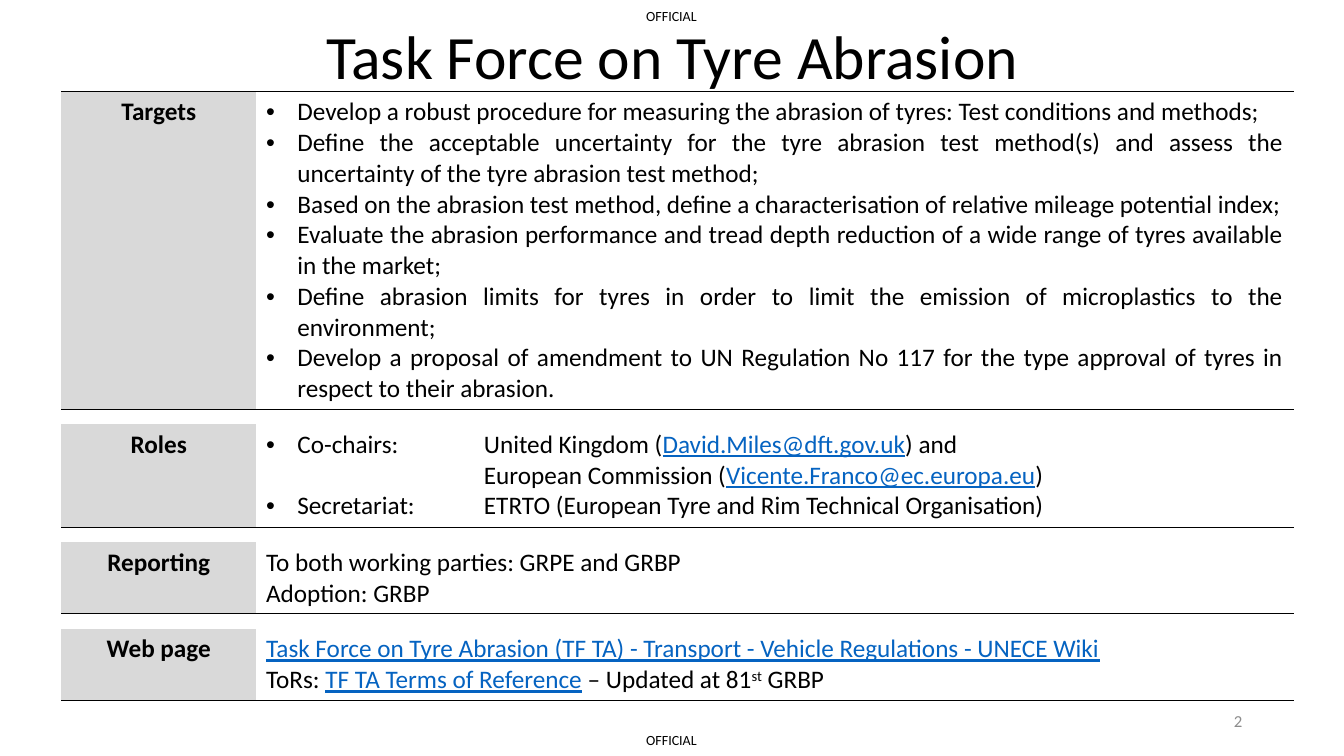
from pptx import Presentation
from pptx.dml.color import RGBColor
from pptx.enum.text import MSO_ANCHOR, PP_ALIGN
from pptx.oxml.ns import qn
from pptx.util import Inches, Pt
from lxml.etree import SubElement

TARGETS = [
    "Develop a robust procedure for measuring the abrasion of tyres: Test conditions and methods;",
    "Define the acceptable uncertainty for the tyre abrasion test method(s) and assess the uncertainty of the tyre abrasion test method;",
    "Based on the abrasion test method, define a characterisation of relative mileage potential index;",
    "Evaluate the abrasion performance and tread depth reduction of a wide range of tyres available in the market;",
    "Define abrasion limits for tyres in order to limit the emission of microplastics to the environment;",
    "Develop a proposal of amendment to UN Regulation No 117 for the type approval of tyres in respect to their abrasion.",
]
LINK = {"color": "0563C1", "line": True}
BULLET = {"left": 0.31, "hang": 0.31, "mark": "•", "tab": 2.16}
ROWS = [
    ("Targets", 3.15, [
        ([(goal, {})], {**BULLET, "align": PP_ALIGN.JUSTIFY}) for goal in TARGETS
    ]),
    ("Roles", 1.02, [
        ([("Co-chairs:\tUnited Kingdom (", {}), ("David.Miles@dft.gov.uk", LINK),
          (") and", {})], BULLET),
        ([("European Commission (", {}), ("Vicente.Franco@ec.europa.eu", LINK),
          (")", {})], {"left": 2.16}),
        ([("Secretariat:\tETRTO (European Tyre and Rim Technical Organisation)", {})], BULLET),
    ]),
    ("Reporting", 0.71, [
        ([("To both working parties: GRPE and GRBP", {}), ("\n", {}),
          ("Adoption: GRBP", {})], {}),
    ]),
    ("Web page", 0.71, [
        ([("Task Force on Tyre Abrasion (TF TA) - Transport - Vehicle Regulations - UNECE Wiki",
           LINK)], {}),
        ([("ToRs: ", {}), ("TF TA Terms of Reference", LINK), (" – Updated at 81", {}),
          ("st", {"base": 30}), (" GRBP", {})], {}),
    ]),
]


def hue(code):
    """Turn a hex string into a colour."""
    return RGBColor.from_string(code)


def write(par, text, size=18, color="000000", bold=False, line=False, base=0):
    """Add formatted text to a paragraph."""
    if text == "\n":
        par.add_line_break()
        return
    run = par.add_run()
    run.text = text
    font = run.font
    font.name, font.size, font.bold, font.underline = "Calibri", Pt(size), bold, line
    font.color.rgb = hue(color)
    if base:
        font._element.set("baseline", str(base * 1000))


def indent(par, left=0, hang=0, mark=None, tab=None, align=PP_ALIGN.LEFT):
    """Set alignment, indent, bullet and tab stop of a paragraph."""
    par.alignment = align
    props = par._p.get_or_add_pPr()
    props.set("marL", str(Inches(left)))
    props.set("indent", str(-Inches(hang)))
    if mark:
        SubElement(props, qn("a:buFont")).set("typeface", "Arial")
        SubElement(props, qn("a:buChar")).set("char", mark)
    if tab:
        stop = SubElement(SubElement(props, qn("a:tabLst")), qn("a:tab"))
        stop.set("pos", str(Inches(tab)))
        stop.set("algn", "l")


class Deck:
    """Hold the style and the current slide."""

    def __init__(self):
        """Open a wide deck with one titled slide."""
        self.show = Presentation()
        self.show.slide_width, self.show.slide_height = Inches(13.33), Inches(7.5)
        self.slide = self.show.slides.add_slide(self.show.slide_layouts[5])
        self.ink, self.shade = "000000", "D9D9D9"

    def title(self, text, x, y, w, h):
        """Fill and place the title."""
        shape = self.slide.shapes.title
        shape.left, shape.top, shape.width, shape.height = map(Inches, (x, y, w, h))
        frame = shape.text_frame
        frame.vertical_anchor = MSO_ANCHOR.MIDDLE
        par = frame.paragraphs[0]
        par.alignment, par.line_spacing = PP_ALIGN.CENTER, 0.9
        write(par, text, size=44)

    def label(self, text, x, y, w, h, inset=0, align=PP_ALIGN.LEFT, **style):
        """Add a one-line text box."""
        frame = self.slide.shapes.add_textbox(*map(Inches, (x, y, w, h))).text_frame
        frame.word_wrap = inset > 0
        frame.vertical_anchor = MSO_ANCHOR.MIDDLE
        frame.margin_left = frame.margin_right = Inches(inset)
        frame.margin_top = frame.margin_bottom = Inches(inset / 2)
        par = frame.paragraphs[0]
        par.alignment = align
        write(par, text, **style)

    def edge(self, cell, *sides):
        """Rule the given sides of a cell."""
        props = cell._tc.get_or_add_tcPr()
        for side in sides:
            rule = SubElement(props, qn(f"a:ln{side}"), w=str(Pt(1)))
            fill = SubElement(rule, qn("a:solidFill"))
            SubElement(fill, qn("a:srgbClr")).set("val", self.ink)

    def gap(self, row, high):
        """Make a thin blank row."""
        row.height = Inches(high)
        for cell in row.cells:
            cell.margin_top = cell.margin_bottom = 0
            SubElement(cell.text_frame.paragraphs[0]._p, qn("a:endParaRPr")).set("sz", "500")
            cell.fill.background()

    def table(self, rows, x, y, widths, space):
        """Add the ruled table with blank rows between its parts."""
        count = 2 * len(rows) - 1
        total = sum(row[1] for row in rows) + space * (len(rows) - 1)
        frame = self.slide.shapes.add_table(
            count, 2, *map(Inches, (x, y, sum(widths), total)))
        grid = frame.table
        grid.first_row = grid.horz_banding = False
        style = grid._tbl.tblPr.find(qn("a:tableStyleId"))
        style.text = "{2D5ABB26-0587-4C30-8999-92F81FD0307C}"
        for col, width in zip(grid.columns, widths):
            col.width = Inches(width)
        for at, (head, high, body) in enumerate(rows):
            if at:
                self.gap(grid.rows[2 * at - 1], space)
            grid.rows[2 * at].height = Inches(high)
            name, cell = grid.rows[2 * at].cells
            for part in (name, cell):
                self.edge(part, *("B" if at else "TB"))
            name.fill.solid()
            name.fill.fore_color.rgb = hue(self.shade)
            cell.fill.background()
            par = name.text_frame.paragraphs[0]
            par.alignment = PP_ALIGN.CENTER
            write(par, head, bold=True)
            text = cell.text_frame
            for spot, (runs, form) in enumerate(body):
                par = text.add_paragraph() if spot else text.paragraphs[0]
                indent(par, **form)
                for words, look in runs:
                    write(par, words, **look)


def main():
    """Build and save the slide."""
    deck = Deck()
    for top in (0.07, 7.26):
        deck.label("OFFICIAL", 6.41, top, 0.53, 0.17, size=10)
    deck.title("Task Force on Tyre Abrasion", 0.92, 0.09, 11.5, 1.01)
    deck.table(ROWS, 0.61, 0.91, (1.93, 10.29), 0.15)
    deck.label("2", 9.42, 6.95, 3, 0.4, inset=0.1, align=PP_ALIGN.RIGHT,
               size=12, color="8C8C8C")
    deck.show.save("out.pptx")


if __name__ == "__main__":
    main()
